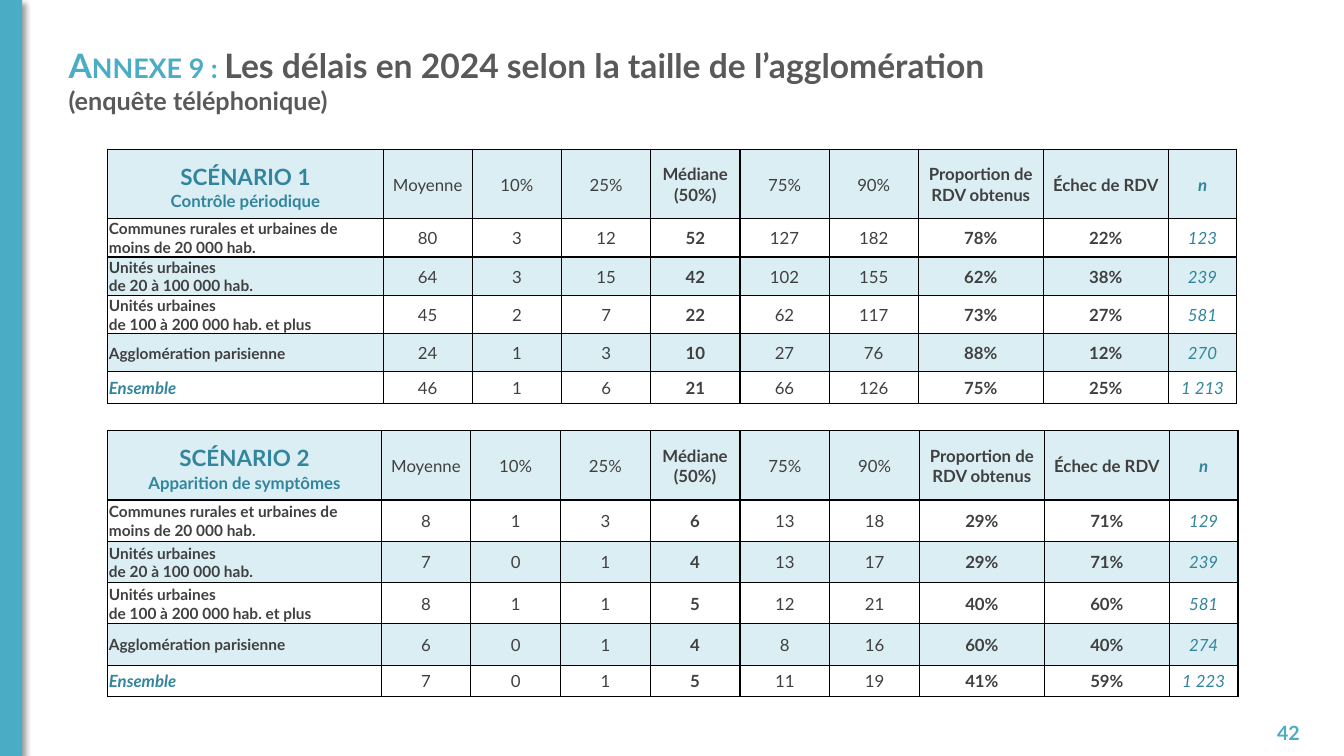
from pptx import Presentation
from pptx.dml.color import RGBColor
from pptx.enum.shapes import MSO_SHAPE
from pptx.enum.text import MSO_ANCHOR, MSO_AUTO_SIZE, PP_ALIGN
from pptx.oxml import parse_xml
from pptx.oxml.ns import nsdecls, qn
from pptx.util import Inches, Pt

SKY, TEAL, GREY, DARK = "4BACC6", "31859C", "595959", "404040"


def hue(code):
    return RGBColor.from_string(code)


def put(para, text, size, color, bold=True, italic=False, small=False):
    run = para.add_run()
    run.text = text
    look = {"name": "Lato", "size": Pt(size), "bold": bold, "italic": italic}
    for key, value in look.items():
        setattr(run.font, key, value)
    run.font.color.rgb = hue(color)
    if small:
        run._r.get_or_add_rPr().set("cap", "small")


deck = Presentation()
deck.slide_width, deck.slide_height = Inches(13.33), Inches(7.5)
slide = deck.slides.add_slide(deck.slide_layouts[5])

title = slide.shapes.title
spot = {"left": 0.58, "top": 0.4, "width": 9.96, "height": 0.96}
for key, value in spot.items():
    setattr(title, key, Inches(value))
frame = title.text_frame
form = {"word_wrap": True, "auto_size": MSO_AUTO_SIZE.NONE, "vertical_anchor": MSO_ANCHOR.TOP}
for key, value in form.items():
    setattr(frame, key, value)
para = frame.paragraphs[0]
para.alignment = PP_ALIGN.LEFT
put(para, "Annexe 9 : ", 24, SKY, small=True)
put(para, "Les délais en 2024 selon la taille de l’agglomération ", 24, GREY)
put(para, "(enquête téléphonique)", 18, GREY)

bar = slide.shapes.add_shape(MSO_SHAPE.RECTANGLE, 0, 0, Inches(0.22), Inches(7.5))
bar.fill.solid()
bar.fill.fore_color.rgb = hue(SKY)
bar.line.fill.background()
bar._element.spPr.append(parse_xml(
    f'<a:effectLst {nsdecls("a")}><a:outerShdw blurRad="{Pt(4)}" dist="{Pt(3)}" '
    f'dir="{45 * 60000}" algn="tl" rotWithShape="0"><a:srgbClr val="000000">'
    '<a:alpha val="40000"/></a:srgbClr></a:outerShdw></a:effectLst>'))

page = slide.shapes.add_textbox(Inches(12.24), Inches(7.07), Inches(0.75), Inches(0.4))
frame = page.text_frame
frame.word_wrap = True
frame.vertical_anchor = MSO_ANCHOR.MIDDLE
frame.paragraphs[0].alignment = PP_ALIGN.RIGHT
put(frame.paragraphs[0], "42", 14, SKY)

heads = ["Moyenne", "10%", "25%", "Médiane\n(50%)", "75%", "90%",
         "Proportion de RDV obtenus", "Échec de RDV", "n"]
names = ["Communes rurales et urbaines de moins de 20 000 hab.",
         "Unités urbaines\nde 20 à 100 000 hab.",
         "Unités urbaines\nde 100 à 200 000 hab. et plus",
         "Agglomération parisienne", "Ensemble"]
plans = [
    {"name": "scénario 2\nApparition de symptômes", "top": 4.27, "first": 2.71,
     "step": 0.89, "row": 0.41, "data": [
         ["8", "1", "3", "6", "13", "18", "29%", "71%", "129"],
         ["7", "0", "1", "4", "13", "17", "29%", "71%", "239"],
         ["8", "1", "1", "5", "12", "21", "40%", "60%", "581"],
         ["6", "0", "1", "4", "8", "16", "60%", "40%", "274"],
         ["7", "0", "1", "5", "11", "19", "41%", "59%", "1 223"]]},
    {"name": "scénario 1\nContrôle périodique", "top": 1.48, "first": 2.73,
     "step": 0.885, "row": 0.38, "data": [
         ["80", "3", "12", "52", "127", "182", "78%", "22%", "123"],
         ["64", "3", "15", "42", "102", "155", "62%", "38%", "239"],
         ["45", "2", "7", "22", "62", "117", "73%", "27%", "581"],
         ["24", "1", "3", "10", "27", "76", "88%", "12%", "270"],
         ["46", "1", "6", "21", "66", "126", "75%", "25%", "1 213"]]},
]
inset = {"margin_left": 0.01, "margin_right": 0.01, "margin_top": 0.01, "margin_bottom": 0}

for plan in plans:
    wides = [plan["first"]] + [plan["step"]] * 6 + [1.24, 1.24, 0.68]
    highs = [0.69] + [plan["row"]] * 4 + [0.31]
    grid = slide.shapes.add_table(
        len(highs), len(wides), Inches(1.07), Inches(plan["top"]),
        Inches(sum(wides)), Inches(sum(highs))).table
    grid.horz_banding = False
    grid._tbl.tblPr.find(qn("a:tableStyleId")).text = "{2D5ABB26-0587-4C30-8999-92F81FD0307C}"
    for col, wide in zip(grid.columns, wides):
        col.width = Inches(wide)
    for row, high in zip(grid.rows, highs):
        row.height = Inches(high)

    lines = [[plan["name"]] + heads]
    lines += [[name] + data for name, data in zip(names, plan["data"])]
    for r, line in enumerate(lines):
        for c, text in enumerate(line):
            cell = grid.cell(r, c)
            cell.vertical_anchor = MSO_ANCHOR.MIDDLE
            for key, value in inset.items():
                setattr(cell, key, Inches(value))
            props = cell._tc.get_or_add_tcPr()
            for side in "LRTB":
                props.append(parse_xml(
                    f'<a:ln{side} {nsdecls("a")} w="{Pt(1)}"><a:solidFill>'
                    f'<a:srgbClr val="000000"/></a:solidFill></a:ln{side}>'))
            if r in (0, 2, 4):
                cell.fill.solid()
                cell.fill.fore_color.rgb = hue(SKY)
                tint = props.find(qn("a:solidFill"))[0]
                tint.append(parse_xml(f'<a:alpha {nsdecls("a")} val="20000"/>'))
            else:
                cell.fill.background()

            last = c == 9
            total = c == 0 and r == 5
            look = {"size": 11 if c == 0 and 0 < r < 5 else 12,
                    "color": TEAL if last or total or r == c == 0 else DARK,
                    "bold": c in (0, 4, 7, 8) or last and r == 0,
                    "italic": last or total}
            for i, part in enumerate(text.split("\n")):
                para = cell.text_frame.paragraphs[0] if i == 0 else cell.text_frame.add_paragraph()
                para.alignment = PP_ALIGN.LEFT if c == 0 and r else PP_ALIGN.CENTER
                top = r == c == i == 0
                put(para, part, **{**look, "size": 20 if top else look["size"], "small": top})

deck.save("out.pptx")
